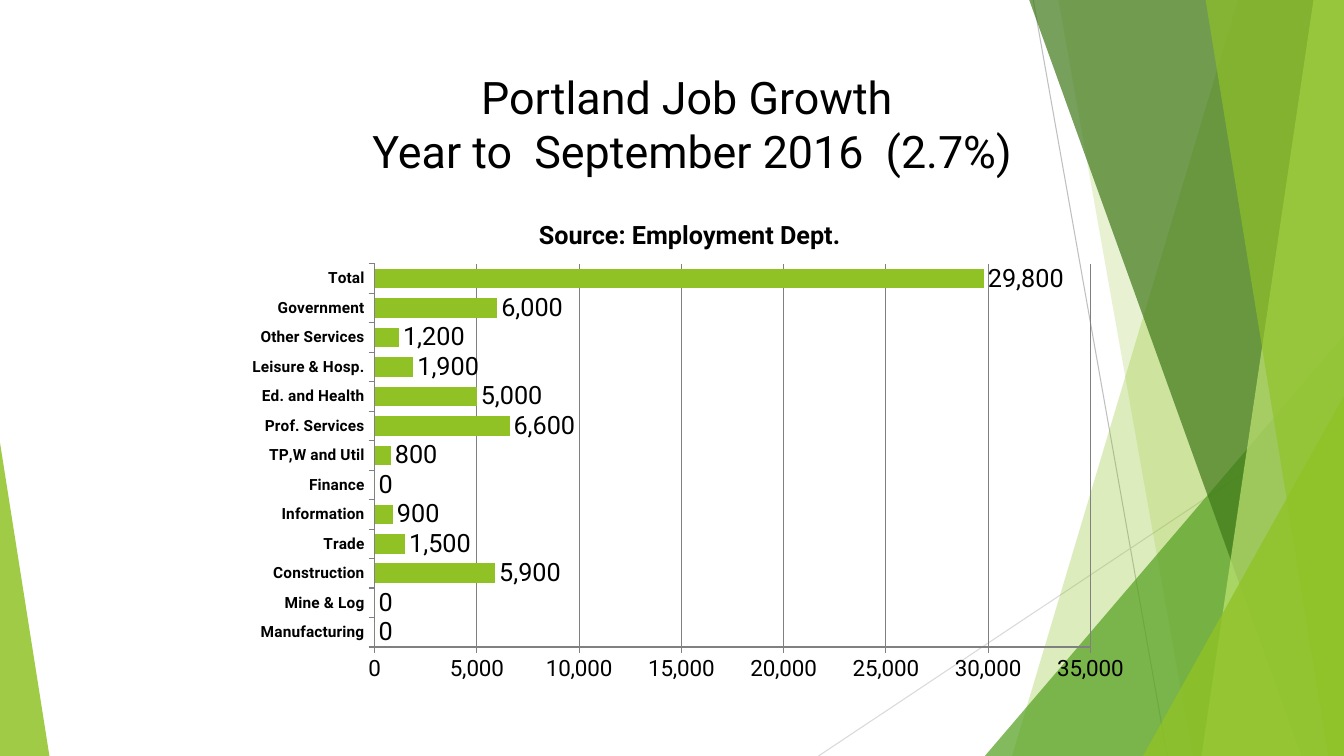
from lxml import etree
from pptx import Presentation
from pptx.chart.data import CategoryChartData
from pptx.dml.color import RGBColor
from pptx.enum.chart import XL_CHART_TYPE, XL_LABEL_POSITION, XL_TICK_LABEL_POSITION, XL_TICK_MARK
from pptx.enum.shapes import MSO_CONNECTOR, MSO_SHAPE
from pptx.enum.text import MSO_ANCHOR, PP_ALIGN
from pptx.oxml import parse_xml
from pptx.oxml.ns import nsdecls, qn
from pptx.util import Inches, Pt

BAR = XL_CHART_TYPE.BAR_CLUSTERED
OUTSIDE_END = XL_LABEL_POSITION.OUTSIDE_END
LABELS_LOW = XL_TICK_LABEL_POSITION.LOW
TICK_OUT, TICK_NONE = XL_TICK_MARK.OUTSIDE, XL_TICK_MARK.NONE
STRAIGHT = MSO_CONNECTOR.STRAIGHT
TRIANGLE = MSO_SHAPE.ISOSCELES_TRIANGLE
TOP, CENTER = MSO_ANCHOR.TOP, PP_ALIGN.CENTER

BLACK = RGBColor(0x00, 0x00, 0x00)
GREY = RGBColor(0x80, 0x80, 0x80)
SILVER = RGBColor(0xBF, 0xBF, 0xBF)
PALE_GREY = RGBColor(0xD9, 0xD9, 0xD9)
LIME = RGBColor(0x90, 0xC2, 0x26)
PALE_LIME = RGBColor(0xC0, 0xE4, 0x74)
GREEN = RGBColor(0x54, 0xA0, 0x21)
DARK_GREEN = RGBColor(0x3F, 0x78, 0x19)

JOBS_ADDED = {
    "Manufacturing": 0,
    "Mine & Log": 0,
    "Construction": 5900,
    "Trade": 1500,
    "Information": 900,
    "Finance": 0,
    "TP,W and Util": 800,
    "Prof. Services": 6600,
    "Ed. and Health": 5000,
    "Leisure & Hosp.": 1900,
    "Other Services": 1200,
    "Government": 6000,
    "Total": 29800,
}


def apply(target, formats):
    for name, value in formats.items():
        setattr(target, name, value)


class GrowthSlide:
    """Draws on one slide; every length is a percentage of its width or height."""

    typeface = "Roboto"

    def __init__(self, deck):
        self.width, self.height = deck.slide_width, deck.slide_height
        self.shapes = deck.slides.add_slide(deck.slide_layouts[6]).shapes

    def box(self, x, y, *size):
        lengths = (x, y, *size)
        return [int(share * (self.height if i % 2 else self.width) / 100)
                for i, share in enumerate(lengths)]

    def style_font(self, font, size, bold=False):
        apply(font, {"name": self.typeface, "size": Pt(size), "bold": bold})
        font.color.rgb = BLACK

    def tint(self, shape, color, opacity):
        shape.shadow.inherit = False
        shape.line.fill.background()
        shape.fill.solid()
        shape.fill.fore_color.rgb = color
        rgb = shape.fill._xPr.find(".//" + qn("a:srgbClr"))
        etree.SubElement(rgb, qn("a:alpha")).set("val", str(opacity * 1000))

    def hairline(self, start, end, color):
        line = self.shapes.add_connector(STRAIGHT, *self.box(*start), *self.box(*end))
        line.line.color.rgb = color
        line.line.width = Pt(0.75)
        etree.SubElement(line._element.spPr, qn("a:effectLst"))

    def facet(self, top_x, bottom_x, color, opacity):
        """A full-height panel from a slanted left side to the right edge."""
        outline = self.shapes.build_freeform(*self.box(top_x, 0))
        corners = [(100, 0), (100, 100), (bottom_x, 100)]
        outline.add_line_segments([self.box(*corner) for corner in corners], close=True)
        self.tint(outline.convert_to_shape(), color, opacity)

    def wedge(self, left, top, width, apex, color, opacity):
        """A triangle standing on the bottom edge."""
        wedge = self.shapes.add_shape(TRIANGLE, *self.box(left, top, width, 100 - top))
        wedge.adjustments[0] = apex
        self.tint(wedge, color, opacity)

    def heading(self, area, text, size):
        frame = self.shapes.add_textbox(*self.box(*area)).text_frame
        apply(frame, {"word_wrap": True, "vertical_anchor": TOP})
        paragraph = frame.paragraphs[0]
        paragraph.text = text
        paragraph.alignment = CENTER
        for run in paragraph.runs:
            self.style_font(run.font, size)

    def layout(self, **places):
        """Manual chart layout, in shares of the chart's size."""
        parts = "".join(f'<c:{name} val="{value}"/>' for name, value in places.items())
        return parse_xml(f'<c:layout {nsdecls("c")}><c:manualLayout>{parts}'
                         '</c:manualLayout></c:layout>')

    def place(self, element, layout, after=None):
        for old in element.findall(qn("c:layout")):
            element.remove(old)
        if after is None:
            element.insert(0, layout)
        else:
            element.find(qn(after)).addnext(layout)

    def bar_chart(self, area, title, values):
        data = CategoryChartData(number_format="#,##0")
        data.categories = list(values)
        data.add_series("Series 1", list(values.values()))
        chart = self.shapes.add_chart(BAR, *self.box(*area), data).chart
        self.style_font(chart.font, 18)
        apply(chart, {"has_legend": False, "has_title": True})

        # Chart title
        caption = chart.chart_title.text_frame
        caption.text = title
        self.style_font(caption.paragraphs[0].runs[0].font, 18, bold=True)
        self.place(chart.chart_title._element,
                   self.layout(xMode="edge", yMode="edge", x=0.33, y=0.04), "c:tx")
        chart.chart_title.include_in_layout = False

        # Bars and their values
        plot = chart.plots[0]
        apply(plot, {"gap_width": 50, "vary_by_categories": False, "has_data_labels": True})
        bars = plot.series[0].format.fill
        bars.solid()
        bars.fore_color.rgb = LIME
        apply(plot.data_labels, {"show_value": True, "number_format": "#,##0",
                                 "number_format_is_linked": False, "position": OUTSIDE_END})
        self.style_font(plot.data_labels.font, 18)

        # Axes
        sectors, jobs = chart.category_axis, chart.value_axis
        apply(sectors, {"tick_label_position": LABELS_LOW, "has_major_gridlines": False})
        apply(jobs, {"minimum_scale": 0, "maximum_scale": 35000, "major_unit": 5000,
                     "has_major_gridlines": True})
        apply(jobs.tick_labels, {"number_format": "#,##0", "number_format_is_linked": False})
        for axis, size, bold in ((sectors, 11, True), (jobs, 16, False)):
            apply(axis, {"major_tick_mark": TICK_OUT, "minor_tick_mark": TICK_NONE})
            self.style_font(axis.tick_labels.font, size, bold)
        for part in (sectors, jobs, jobs.major_gridlines):
            part.format.line.color.rgb = GREY
            part.format.line.width = Pt(0.75)
        self.place(chart._chartSpace.chart.plotArea,
                   self.layout(layoutTarget="inner", xMode="edge", yMode="edge",
                               x=0.154, y=0.141, w=0.789, h=0.768))


def main():
    deck = Presentation()
    apply(deck, {"slide_width": Inches(13.33), "slide_height": Inches(7.5)})
    slide = GrowthSlide(deck)

    # Green facets
    slide.hairline((76.88, 0), (86.85, 100), SILVER)
    slide.hairline((100, 53.73), (60.9, 100), PALE_GREY)
    slide.facet(92.1, 75.3, LIME, 30)
    slide.facet(78.75, 88.73, LIME, 20)
    slide.wedge(73.28, 44.4, 26.72, 1, GREEN, 72)
    slide.facet(76.58, 96.83, DARK_GREEN, 70)
    slide.facet(97.73, 89.4, PALE_LIME, 70)
    slide.facet(89.7, 98.85, LIME, 65)
    slide.wedge(85.05, 52.4, 14.95, 1, LIME, 80)
    slide.wedge(0, 58.53, 3.68, 0, LIME, 85)

    # Title and chart
    slide.heading((17.78, 8.53, 67.5, 12.27),
                  "Portland Job Growth \vYear to  September 2016  (2.7%)", 32)
    slide.bar_chart((17.48, 25.6, 67.5, 66), "Source: Employment Dept.", JOBS_ADDED)

    deck.save("out.pptx")


if __name__ == "__main__":
    main()
